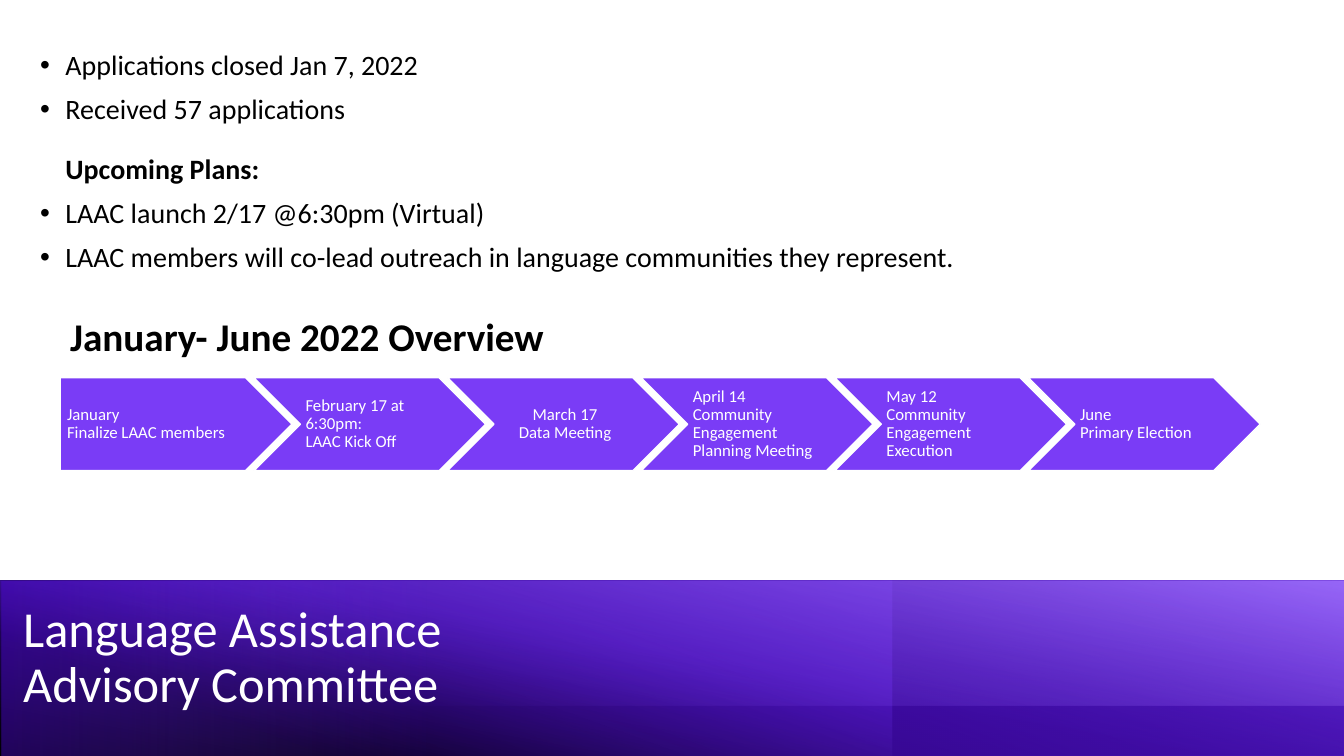
from lxml import etree
from pptx import Presentation
from pptx.dml.color import RGBColor
from pptx.enum.shapes import MSO_SHAPE as Preset
from pptx.enum.text import MSO_ANCHOR as Anchor, MSO_AUTO_SIZE as AutoSize, PP_ALIGN as Align
from pptx.oxml import parse_xml
from pptx.oxml.ns import nsdecls, qn
from pptx.util import Cm, Pt

TITLE = "Language Assistance Advisory Committee"
OVERVIEW = "January- June 2022 Overview"
# text, is a heading
NOTES = [
    ("Applications closed Jan 7, 2022", False),
    ("Received 57 applications", False),
    ("Upcoming Plans:", True),
    ("LAAC launch 2/17 @6:30pm (Virtual)", False),
    ("LAAC members will co-lead outreach in language communities they represent.", False),
]
MILESTONES = [
    ("January\vFinalize LAAC members", Align.LEFT),
    ("February 17 at 6:30pm:\vLAAC Kick Off", Align.LEFT),
    ("March 17\vData Meeting", Align.CENTER),
    ("April 14\vCommunity Engagement Planning Meeting", Align.LEFT),
    ("May 12\vCommunity Engagement Execution", Align.LEFT),
    ("June\vPrimary Election", Align.LEFT),
]

FONT = "Calibri"
BLACK = RGBColor(0x00, 0x00, 0x00)
WHITE = RGBColor(0xFF, 0xFF, 0xFF)
INDIGO = RGBColor(0x35, 0x07, 0x92)
PURPLE = RGBColor(0x50, 0x0A, 0xDB)
VIOLET = RGBColor(0x7A, 0x3C, 0xF6)
LILAC = RGBColor(0xAF, 0x8A, 0xFA)

# Band layers in cm: left, top, width, height, flipped, rotation, angle,
# stops of (position %, colour, opacity %)
BAND_LAYERS = [
    (0, 14.63, 33.87, 4.42, True, 0, 260, [(0, BLACK, 100), (54, INDIGO, 100)]),
    (-0.05, 14.63, 33.92, 4.42, True, 0, 250, [(18, PURPLE, 0), (100, VIOLET, 100)]),
    (22.49, 14.63, 11.38, 4.42, True, 0, 260, [(23, INDIGO, 61), (100, INDIGO, 0)]),
    (-0.03, 14.63, 33.9, 3.16, False, 0, 280, [(18, VIOLET, 0), (100, LILAC, 56)]),
    (0.05, 14.65, 21.5, 4.42, False, 180, 0, [(50, VIOLET, 0), (100, PURPLE, 41)]),
]


def box(left, top, width, height):
    return Cm(left), Cm(top), Cm(width), Cm(height)


def style(paragraph, size, color, bold=False):
    font = paragraph.font
    font.name, font.size, font.bold = FONT, Pt(size), bold
    font.color.rgb = color


def add_band_layer(slide, left, top, width, height, flipped, rotation, angle, stops):
    layer = slide.shapes.add_shape(Preset.RECTANGLE, *box(left, top, width, height))
    layer.shadow.inherit = False
    layer.line.fill.background()
    layer.fill.background()
    layer.rotation = rotation
    properties = layer.element.spPr
    if flipped:
        properties.find(qn("a:xfrm")).set("flipH", "1")
    stop_xml = "".join(
        f'<a:gs pos="{position * 1000}"><a:srgbClr val="{color}">'
        f'<a:alpha val="{opacity * 1000}"/></a:srgbClr></a:gs>'
        for position, color, opacity in stops)
    gradient = parse_xml(
        f'<a:gradFill {nsdecls("a")} rotWithShape="1"><a:gsLst>{stop_xml}</a:gsLst>'
        f'<a:lin ang="{angle * 60000}" scaled="0"/></a:gradFill>')
    properties.replace(properties.find(qn("a:noFill")), gradient)


def add_notes(slide):
    frame = slide.shapes.add_textbox(*box(0.76, 1.17, 29.85, 6.2)).text_frame
    frame.word_wrap = True
    for i, (text, heading) in enumerate(NOTES):
        paragraph = frame.paragraphs[0] if i == 0 else frame.add_paragraph()
        paragraph.text = text
        paragraph.line_spacing = 0.9
        if i:
            paragraph.space_before = Pt(21 if heading else 10)
        layout = paragraph._p.get_or_add_pPr()
        layout.set("marL", str(Cm(0.64)))
        layout.set("indent", str(0 if heading else -Cm(0.64)))
        if not heading:
            etree.SubElement(layout, qn("a:buFont")).set("typeface", "Arial")
            etree.SubElement(layout, qn("a:buChar")).set("char", "•")
        style(paragraph, 20, BLACK, heading)


def add_timeline(slide):
    start, pitch = 1.52, 4.88
    for i, (text, alignment) in enumerate(MILESTONES):
        preset = Preset.CHEVRON if i else Preset.PENTAGON
        step = slide.shapes.add_shape(preset, *box(start + i * pitch, 9.52, 5.84, 2.34))
        step.shadow.inherit = False
        step.fill.solid()
        step.fill.fore_color.rgb = VIOLET
        step.line.color.rgb = WHITE
        step.line.width = Pt(1)
        frame = step.text_frame
        frame.word_wrap = True
        frame.vertical_anchor = Anchor.MIDDLE
        frame.margin_left = Cm(0.13 if i else 0.17)
        frame.margin_right = Cm(0.05)
        frame.margin_top = frame.margin_bottom = Cm(0.1)
        paragraph = frame.paragraphs[0]
        paragraph.text = text
        paragraph.alignment = alignment
        paragraph.line_spacing = 0.9
        style(paragraph, 12, WHITE)


def add_overview_heading(slide):
    frame = slide.shapes.add_textbox(*box(1.52, 7.75, 13.26, 1.45)).text_frame
    frame.word_wrap = True
    frame.text = OVERVIEW
    style(frame.paragraphs[0], 28, BLACK, True)


def place_title(slide):
    title = slide.shapes.title
    title.left, title.top, title.width, title.height = box(0.33, 15.24, 15.01, 2.72)
    frame = title.text_frame
    frame.text = TITLE
    frame.word_wrap = True
    frame.auto_size = AutoSize.NONE
    frame.vertical_anchor = Anchor.MIDDLE
    paragraph = frame.paragraphs[0]
    paragraph.alignment = Align.LEFT
    paragraph.line_spacing = 0.9
    style(paragraph, 36, WHITE)
    # Bring the title in front of the band
    slide.shapes._spTree.append(title.element)


def main():
    deck = Presentation()
    deck.slide_width, deck.slide_height = Cm(33.87), Cm(19.05)
    slide = deck.slides.add_slide(deck.slide_layouts[5])
    for layer in BAND_LAYERS:
        add_band_layer(slide, *layer)
    place_title(slide)
    add_notes(slide)
    add_timeline(slide)
    add_overview_heading(slide)
    deck.save("out.pptx")


if __name__ == "__main__":
    main()
